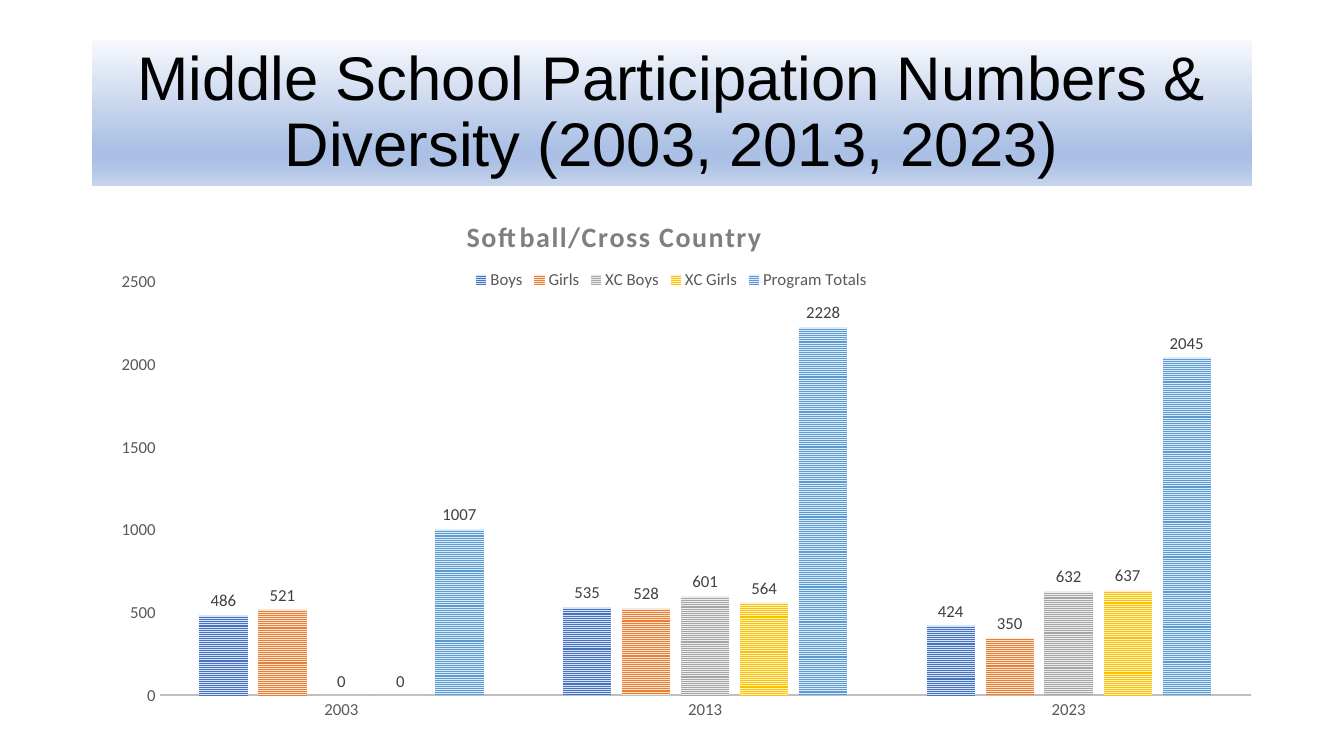
from dataclasses import dataclass
from typing import Any

from lxml.etree import Element, SubElement
from pptx import Presentation
from pptx.chart.data import CategoryChartData
from pptx.dml.color import RGBColor
from pptx.enum.chart import XL_CHART_TYPE, XL_LABEL_POSITION, XL_LEGEND_POSITION, XL_TICK_MARK
from pptx.enum.dml import MSO_PATTERN
from pptx.enum.shapes import MSO_SHAPE
from pptx.enum.text import MSO_ANCHOR, PP_ALIGN
from pptx.oxml.ns import qn
from pptx.util import Inches, Pt

COLS, ROWS = 160, 150
WIDE, HIGH = Inches(13.33), Inches(7.5)
HUES = {
    "black": "000000", "dark": "404040", "text": "595959",
    "head": "7F7F7F", "line": "BFBFBF",
    "blue": "4472C4", "pale blue": "DAE3F3",
    "orange": "ED7D31", "pale orange": "FBE5D6",
    "gray": "A5A5A5", "pale gray": "EDEDED",
    "gold": "FFC000", "pale gold": "FFF2CC",
    "sky": "5B9BD5", "pale sky": "DEEBF7",
    "top": "F6F8FC", "mid": "ABC0E4", "base": "C7D5ED",
}


@dataclass(frozen=True)
class Box:
    col: int
    row: int
    wide: int
    high: int

    def place(self) -> tuple[int, ...]:
        return (round(WIDE * self.col / COLS), round(HIGH * self.row / ROWS),
                round(WIDE * self.wide / COLS), round(HIGH * self.high / ROWS))


@dataclass(frozen=True)
class Group:
    name: str
    hue: str
    counts: tuple[int, ...]


@dataclass(frozen=True)
class Stop:
    share: int
    hue: str


BANNER = Box(11, 8, 138, 29)
CHART = Box(11, 37, 138, 107)
PLOT = Box(8, 19, 130, 82)
HEAD = Box(44, 5, 0, 0)
KEY = Box(45, 16, 48, 5)
YEARS = ("2003", "2013", "2023")
GROUPS = (
    Group("Boys", "blue", (486, 535, 424)),
    Group("Girls", "orange", (521, 528, 350)),
    Group("XC Boys", "gray", (0, 601, 632)),
    Group("XC Girls", "gold", (0, 564, 637)),
    Group("Program Totals", "sky", (1007, 2228, 2045)),
)
STOPS = (Stop(0, "top"), Stop(74, "mid"), Stop(83, "mid"), Stop(100, "base"))


def shade(hue: str) -> RGBColor:
    return RGBColor.from_string(HUES[hue])


def apply(item: Any, **values: Any) -> None:
    for key, value in values.items():
        setattr(item, key, value)


def style(font: Any, size: int, hue: str, name: str = "Calibri", bold: bool = False) -> None:
    apply(font, size=Pt(size), name=name, bold=bold)
    font.color.rgb = shade(hue)


def pin(node: Any, spot: int, box: Box, inner: bool = False) -> None:
    for old in node.findall(qn("c:layout")):
        node.remove(old)
    frame = Element(qn("c:layout"))
    node.insert(spot, frame)
    rules = SubElement(frame, qn("c:manualLayout"))
    parts: dict[str, Any] = {"layoutTarget": "inner"} if inner else {}
    parts |= {"xMode": "edge", "yMode": "edge",
              "x": box.col / CHART.wide, "y": box.row / CHART.high}
    if box.wide:
        parts |= {"w": box.wide / CHART.wide, "h": box.high / CHART.high}
    for tag, value in parts.items():
        SubElement(rules, qn(f"c:{tag}")).set("val", str(value))


def banner(slide: Any) -> None:
    shape = slide.shapes.add_shape(MSO_SHAPE.RECTANGLE, *BANNER.place())
    shape.shadow.inherit = False
    shape.line.fill.background()
    shape.fill.gradient()
    shape.fill.gradient_angle = 270
    stops = shape.fill._fill._gradFill.find(qn("a:gsLst"))
    for old in list(stops):
        stops.remove(old)
    for stop in STOPS:
        node = SubElement(stops, qn("a:gs"), pos=str(stop.share * 1000))
        SubElement(node, qn("a:srgbClr"), val=HUES[stop.hue])
    frame = shape.text_frame
    apply(frame, word_wrap=True, vertical_anchor=MSO_ANCHOR.MIDDLE)
    para = frame.paragraphs[0]
    apply(para, alignment=PP_ALIGN.CENTER, line_spacing=0.9)
    run = para.add_run()
    run.text = "Middle School Participation Numbers & Diversity (2003, 2013, 2023)"
    style(run.font, 44, "black", "Arial")


def heading(chart: Any) -> None:
    title = chart.chart_title
    run = title.text_frame.paragraphs[0].add_run()
    run.text = "Softball/Cross Country"
    style(run.font, 20, "head", bold=True)
    run.font._element.set("spc", "100")
    pin(title._element, 1, HEAD)


def axes(chart: Any) -> None:
    for axis in (chart.category_axis, chart.value_axis):
        apply(axis, major_tick_mark=XL_TICK_MARK.NONE, minor_tick_mark=XL_TICK_MARK.NONE,
              has_major_gridlines=False)
        style(axis.tick_labels.font, 12, "text")
    line = chart.category_axis.format.line
    line.width = Pt(1.5)
    line.color.rgb = shade("line")
    apply(chart.value_axis, minimum_scale=0, maximum_scale=2500, major_unit=500)
    chart.value_axis.format.line.fill.background()


def bars(chart: Any) -> None:
    plot = chart.plots[0]
    apply(plot, gap_width=164, overlap=-22, vary_by_categories=False)
    for group, series in zip(GROUPS, plot.series):
        series.invert_if_negative = False
        fill = series.format.fill
        fill.patterned()
        fill.pattern = MSO_PATTERN.NARROW_HORIZONTAL
        fill.fore_color.rgb = shade(group.hue)
        fill.back_color.rgb = shade(f"pale {group.hue}")
        labels = series.data_labels
        apply(labels, show_value=True, position=XL_LABEL_POSITION.OUTSIDE_END)
        style(labels.font, 12, "dark")


def graph(slide: Any) -> None:
    data = CategoryChartData()
    data.categories = YEARS
    for group in GROUPS:
        data.add_series(group.name, group.counts)
    chart = slide.shapes.add_chart(XL_CHART_TYPE.COLUMN_CLUSTERED, *CHART.place(), data).chart
    style(chart.font, 10, "black")
    apply(chart, has_title=True, has_legend=True)
    heading(chart)
    axes(chart)
    bars(chart)
    apply(chart.legend, position=XL_LEGEND_POSITION.TOP, include_in_layout=False)
    style(chart.legend.font, 12, "text")
    pin(chart.legend._element, 1, KEY)
    pin(chart._chartSpace.chart.plotArea, 0, PLOT, inner=True)


def main() -> None:
    deck = Presentation()
    apply(deck, slide_width=WIDE, slide_height=HIGH)
    slide = deck.slides.add_slide(deck.slide_layouts[6])
    banner(slide)
    graph(slide)
    deck.save("out.pptx")


if __name__ == "__main__":
    main()
